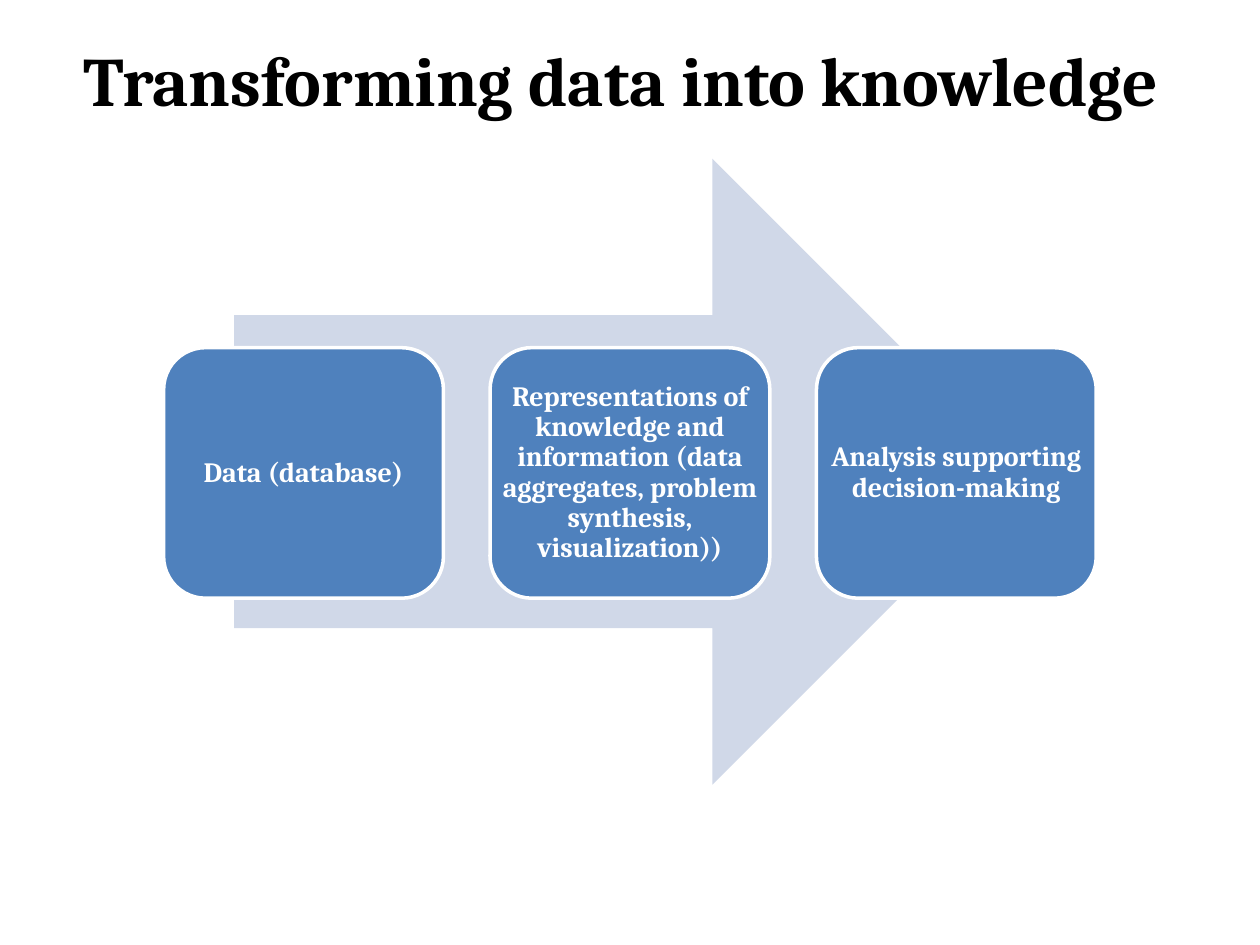
from dataclasses import dataclass

import pptx
import pptx.dml.color
import pptx.enum.shapes
import pptx.enum.text
import pptx.util
from pptx.util import Cm

FONT = "Cambria"
BLACK, WHITE, BLUE, PALE_BLUE = "000000", "FFFFFF", "4F81BD", "D0D8E8"
SHAPES = pptx.enum.shapes.MSO_SHAPE
ANCHOR = pptx.enum.text.MSO_ANCHOR


@dataclass
class Box:
    left: float
    top: float
    width: float
    height: float

    def lengths(self) -> tuple:
        return Cm(self.left), Cm(self.top), Cm(self.width), Cm(self.height)


@dataclass
class Margins:
    left: float
    top: float
    right: float
    bottom: float


def set_color(color_format, color: str) -> None:
    color_format.rgb = pptx.dml.color.RGBColor.from_string(color)


def add_filled_shape(slide, kind, box: Box, color: str):
    shape = slide.shapes.add_shape(kind, *box.lengths())
    shape.shadow.inherit = False
    shape.fill.solid()
    set_color(shape.fill.fore_color, color)
    shape.line.fill.background()
    return shape


def add_text(slide, box: Box, text: str, size: float, color: str,
             anchor, margins: Margins, line_spacing: float) -> None:
    text_frame = slide.shapes.add_textbox(*box.lengths()).text_frame
    text_frame.word_wrap = True
    text_frame.vertical_anchor = anchor
    text_frame.margin_left = Cm(margins.left)
    text_frame.margin_top = Cm(margins.top)
    text_frame.margin_right = Cm(margins.right)
    text_frame.margin_bottom = Cm(margins.bottom)
    text_frame.text = text
    paragraph = text_frame.paragraphs[0]
    paragraph.alignment = pptx.enum.text.PP_ALIGN.CENTER
    paragraph.line_spacing = line_spacing
    font = paragraph.runs[0].font
    font.name, font.size, font.bold = FONT, pptx.util.Pt(size), True
    set_color(font.color, color)


def add_step(slide, box: Box, text: str) -> None:
    shape = add_filled_shape(slide, SHAPES.ROUNDED_RECTANGLE, box, BLUE)
    set_color(shape.line.color, WHITE)
    shape.line.width = pptx.util.Pt(2)
    # The label has its own box, so that it can use the full width of the step
    add_text(slide, box, text, 16, WHITE, ANCHOR.MIDDLE,
             Margins(0.17, 0.17, 0.17, 0.17), 0.9)


def main() -> None:
    presentation = pptx.Presentation()
    presentation.slide_width, presentation.slide_height = Cm(25.4), Cm(19.05)
    slide = presentation.slides.add_slide(presentation.slide_layouts[6])

    # Title
    add_text(slide, Box(1.27, 0.76, 22.86, 3.18),
             "Transforming data into knowledge", 39.6, BLACK, ANCHOR.TOP,
             Margins(0.25, 0, 0.61, 0), 1.0)

    # Arrow behind the steps
    add_filled_shape(slide, SHAPES.RIGHT_ARROW,
                     Box(4.72, 3.2, 15.95, 12.62), PALE_BLUE)

    # Steps from data to analysis
    steps = [
        "Data (database)",
        "Representations of knowledge and information "
        "(data aggregates, problem synthesis, visualization))",
        "Analysis supporting decision-making",
    ]
    step_width, step_gap = 5.64, 0.94
    for index, text in enumerate(steps):
        left = 3.3 + index * (step_width + step_gap)
        add_step(slide, Box(left, 7.01, step_width, 5.05), text)

    presentation.save("out.pptx")


if __name__ == "__main__":
    main()
